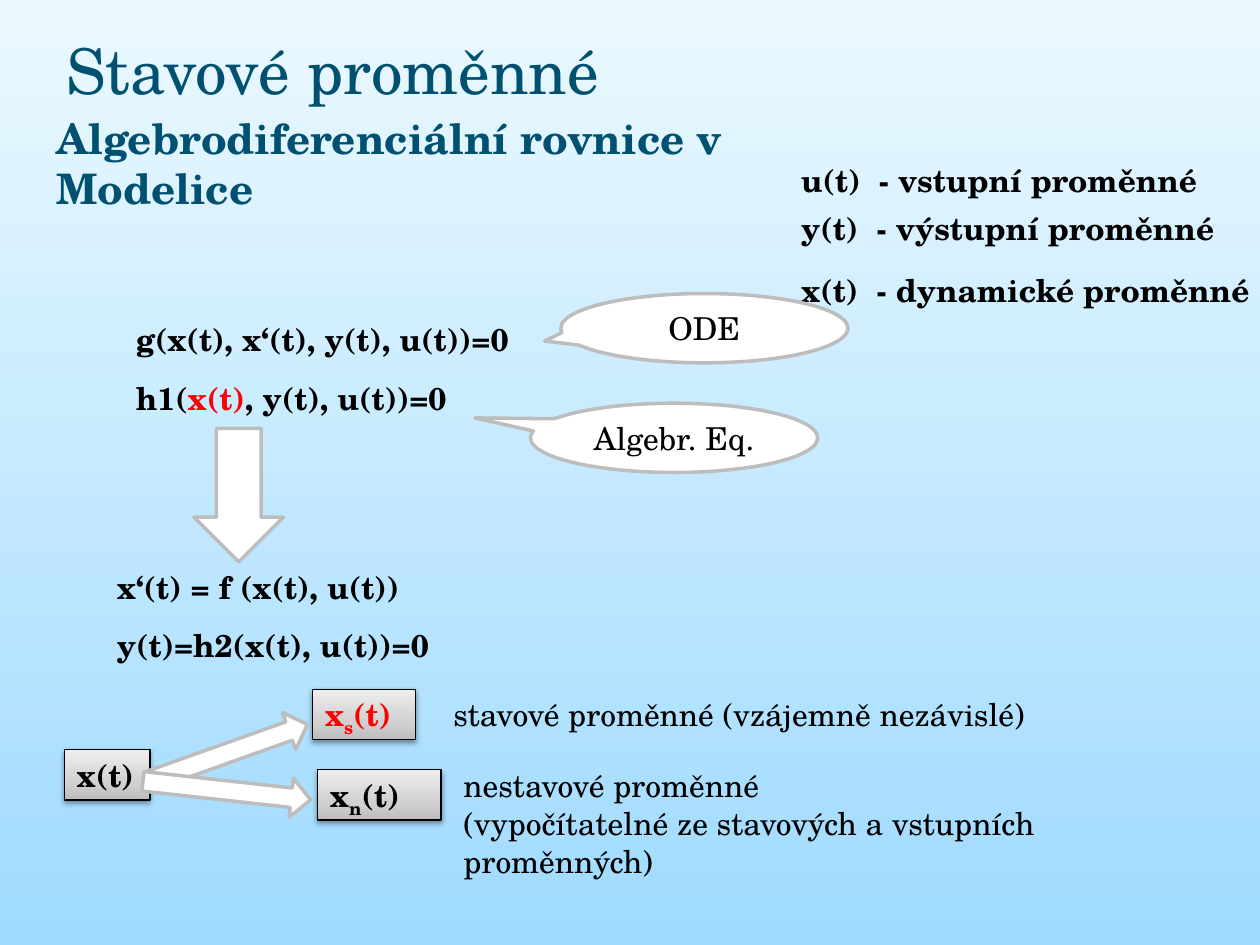
from copy import deepcopy

from lxml import etree
from pptx import Presentation
from pptx.dml.color import RGBColor
from pptx.enum.shapes import MSO_SHAPE
from pptx.enum.text import MSO_ANCHOR, PP_ALIGN
from pptx.oxml.ns import qn
from pptx.util import Inches, Pt

RECT = MSO_SHAPE.RECTANGLE
CALLOUT = MSO_SHAPE.OVAL_CALLOUT
DOWN, RIGHT = MSO_SHAPE.DOWN_ARROW, MSO_SHAPE.RIGHT_ARROW
TOP, MIDDLE = MSO_ANCHOR.TOP, MSO_ANCHOR.MIDDLE
LEFT, CENTER = PP_ALIGN.LEFT, PP_ALIGN.CENTER

FONT = "TeX Gyre Schola"
LINE_H = 0.4
COLORS = {
    "sky": "EBF9FF", "sky_deep": "9FDAFF", "heading": "005070",
    "text": "000000", "accent": "FF0000", "white": "FFFFFF", "edge": "BDBDBD",
}
SKY = [(0, COLORS["sky"]), (1, COLORS["sky_deep"])]
METAL = [(0, "BDBDBD"), (0.35, "D1D1D1"), (1, "EEEEEE")]


def rgb(name):
    return RGBColor.from_string(COLORS[name])


def fill_gradient(fill, stops, angle):
    fill.gradient()
    fill.gradient_angle = angle
    first = fill.gradient_stops[0]._gs
    for _ in stops[2:]:
        first.addnext(deepcopy(first))
    for stop, (position, color) in zip(fill.gradient_stops, stops):
        stop.position = position
        stop.color.rgb = RGBColor.from_string(color)


def write(shape, paragraphs, wrap=False, anchor=TOP, align=LEFT, **style):
    """Fill a shape with paragraphs, each a string or a list of (text, format) runs."""
    tf = shape.text_frame
    tf.word_wrap, tf.vertical_anchor = wrap, anchor
    for i, runs in enumerate(paragraphs):
        p = tf.paragraphs[0] if i == 0 else tf.add_paragraph()
        p.alignment = align
        for text, extra in [(runs, {})] if isinstance(runs, str) else runs:
            look = {"size": 18, "bold": False, "color": "text", **style, **extra}
            r = p.add_run()
            r.text = text
            r.font.color.rgb = rgb(look["color"])
            values = {"name": FONT, "size": Pt(look["size"]), "bold": look["bold"]}
            for key, value in values.items():
                setattr(r.font, key, value)
            if look.get("sub"):
                r.font._element.set("baseline", "-25000")


def add_text(s, box, *paragraphs, **style):
    write(s.shapes.add_textbox(*map(Inches, box)), paragraphs, **style)


def add_white_shape(s, kind, box, rotation=0):
    sp = s.shapes.add_shape(kind, *map(Inches, box))
    sp.shadow.inherit = False
    sp.rotation = rotation
    sp.fill.solid()
    sp.fill.fore_color.rgb = rgb("white")
    sp.line.color.rgb = rgb("edge")
    sp.line.width = Pt(2)
    return sp


def add_callout(s, box, text, tip):
    sp = add_white_shape(s, CALLOUT, box)
    for i, value in enumerate(tip):
        sp.adjustments[i] = value
    write(sp, [text], wrap=True, anchor=MIDDLE, align=CENTER)


def add_variable(s, box, runs, color="text"):
    """Metallic box with a soft shadow that holds a variable's name."""
    sp = s.shapes.add_shape(RECT, *map(Inches, box))
    fill_gradient(sp.fill, METAL, 90)
    sp.line.color.rgb = rgb("text")
    sp.line.width = Pt(0.75)
    sp.shadow.inherit = False
    effects = sp._element.spPr.find(qn("a:effectLst"))
    shadow = etree.SubElement(effects, qn("a:outerShdw"), blurRad=str(Pt(3.1)),
                              dist=str(Pt(1.6)), dir="5400000", rotWithShape="0")
    tone = etree.SubElement(shadow, qn("a:srgbClr"), val=COLORS["text"])
    etree.SubElement(tone, qn("a:alpha"), val="38000")
    write(sp, [runs], bold=True, color=color)


def add_lines(s, box, pitch, lines):
    """Bold one-line texts, stacked at an equal pitch from the top of the box."""
    x, y, w = box
    for i, line in enumerate(lines):
        add_text(s, (x, y + i * pitch, w, LINE_H), line, bold=True)


def add_heading(s, x, y):
    add_text(s, (x + 0.08, y, 8.99, 1.1), "Stavové proměnné",
             wrap=True, anchor=MIDDLE, size=36, color="heading")
    add_text(s, (x, y + 0.84, 7.13, 0.9), "Algebrodiferenciální rovnice v Modelice",
             wrap=True, size=24, bold=True, color="heading")


def add_legend(s, x, y):
    add_lines(s, (x, y, 3.5), 0.38,
              ["u(t)  - vstupní proměnné", "y(t)  - výstupní proměnné"])
    add_lines(s, (x, y + 0.87, 3.8), 0, ["x(t)  - dynamické proměnné"])


def add_equations(s, x, y):
    add_lines(s, (x + 0.15, y, 3.34), 0.47, [
        "g(x(t), x‘(t), y(t), u(t))=0",
        [("h1(", {}), ("x(t)", {"color": "accent"}), (", y(t), u(t))=0", {})],
    ])
    add_white_shape(s, DOWN, (x + 0.71, y + 0.91, 0.71, 1.06))
    add_lines(s, (x, y + 1.97, 2.87), 0.46,
              ["x‘(t) = f (x(t), u(t))", "y(t)=h2(x(t), u(t))=0"])
    add_callout(s, (x + 3.62, y - 0.16, 2.28, 0.55), "ODE", (-0.556, 0.185))
    add_callout(s, (x + 3.38, y + 0.71, 2.28, 0.55), "Algebr. Eq.", (-0.694, -0.287))


def add_split(s, x, y):
    """x(t) divided into state and non-state variables."""
    add_variable(s, (x + 1.97, y, 0.82, LINE_H),
                 [("x", {}), ("s", {"sub": True}), ("(t)", {})], "accent")
    add_variable(s, (x + 2.01, y + 0.64, 0.98, LINE_H),
                 [("x", {}), ("n", {"sub": True}), ("(t)", {})])
    add_variable(s, (x, y + 0.48, 0.68, LINE_H), "x(t)")
    for dx, dy, rotation in [(0.63, 0.35, 340.4), (0.62, 0.65, 6.3)]:
        add_white_shape(s, RIGHT, (x + dx, y + dy, 1.34, 0.31), rotation)
    add_text(s, (x + 2.99, y, 4.76, LINE_H), "stavové proměnné (vzájemně nezávislé)")
    add_text(s, (x + 3.07, y + 0.56, 5.91, 1.01), "nestavové proměnné",
             "(vypočítatelné ze stavových a vstupních proměnných)", wrap=True)


def main():
    prs = Presentation()
    prs.slide_width, prs.slide_height = Inches(10), Inches(7.5)
    s = prs.slides.add_slide(prs.slide_layouts[6])
    fill_gradient(s.background.fill, SKY, 270)
    add_heading(s, 0.35, 0)
    add_legend(s, 6.26, 1.23)
    add_equations(s, 0.83, 2.49)
    add_split(s, 0.51, 5.47)
    prs.save("out.pptx")


if __name__ == "__main__":
    main()
